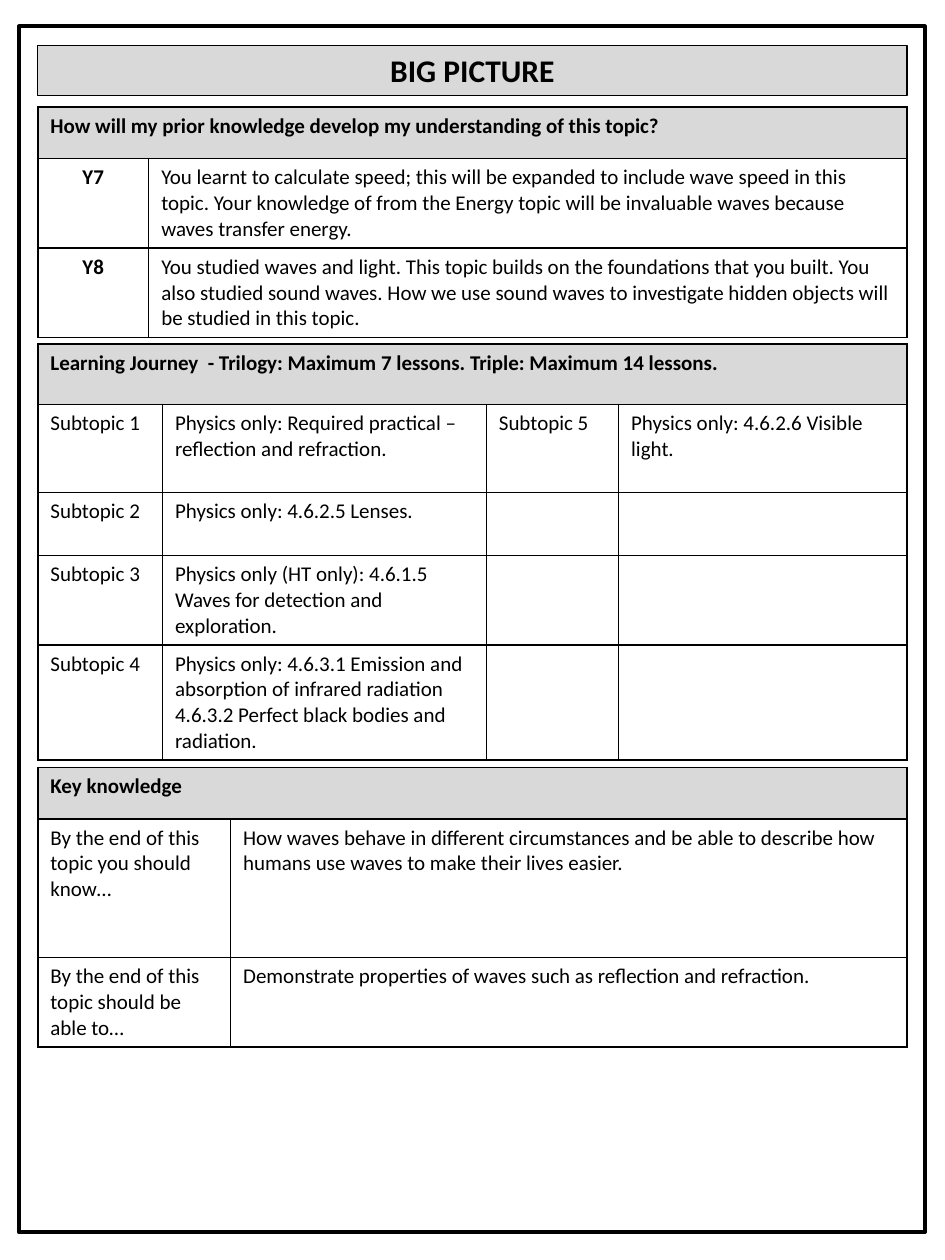
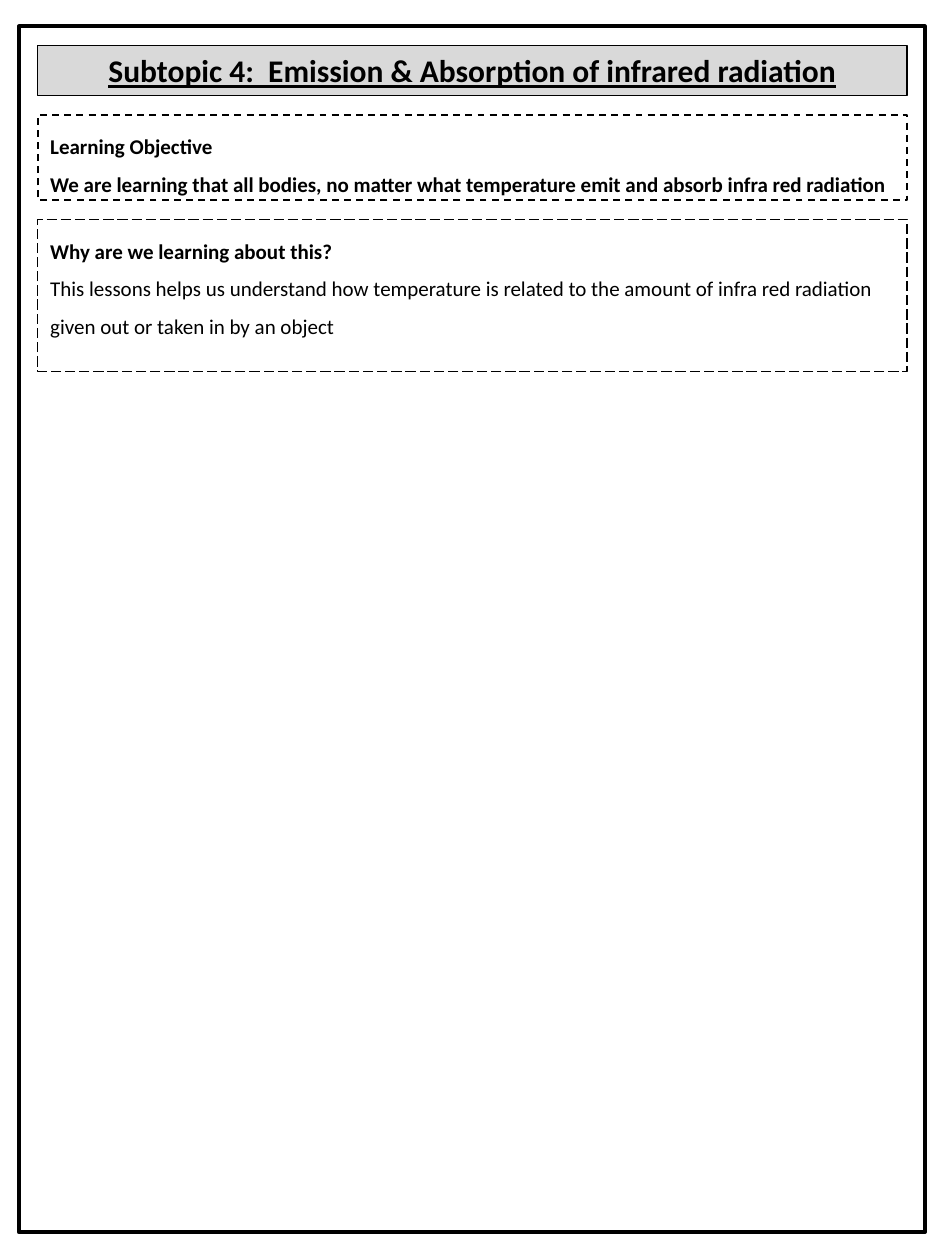
import pptx
import pptx.dml.color
import pptx.enum.dml
import pptx.enum.shapes
import pptx.enum.text
import pptx.oxml.ns
import pptx.util
from lxml import etree

Inches = pptx.util.Inches
Pt = pptx.util.Pt
RGBColor = pptx.dml.color.RGBColor
Align = pptx.enum.text.PP_ALIGN
Dash = pptx.enum.dml.MSO_LINE

BLACK = RGBColor(0x00, 0x00, 0x00)
GREY = RGBColor(0xD9, 0xD9, 0xD9)
WHITE = RGBColor(0xFF, 0xFF, 0xFF)
FONT = "Calibri"
LEFT, WIDTH = 0.3, 6.9


class Sheet:
    """Holds the deck, its style and the current slide."""

    def __init__(self):
        self.deck = pptx.Presentation()
        self.deck.slide_width = Inches(7.5)
        self.deck.slide_height = Inches(10)

    def page(self, title, under=None):
        """Start a slide with its frame and title band."""
        self.slide = self.deck.slides.add_slide(self.deck.slide_layouts[6])
        self.box(0.15, 0.21, 7.19, 9.57, 2.25)
        band = self.box(LEFT, 0.36, WIDTH, 0.4, 0.75, fill=GREY)
        self.text(band.text_frame, [(title, True)], 18, Align.CENTER, under=under)

    def box(self, left, top, width, height, line, fill=None, dash=None):
        shape = self.slide.shapes.add_shape(
            pptx.enum.shapes.MSO_SHAPE.RECTANGLE,
            Inches(left), Inches(top), Inches(width), Inches(height))
        shape.shadow.inherit = False
        self.fill(shape, fill)
        shape.line.color.rgb = BLACK
        shape.line.width = Pt(line)
        if dash:
            shape.line.dash_style = dash
        shape.text_frame.vertical_anchor = pptx.enum.text.MSO_ANCHOR.TOP
        return shape

    def fill(self, item, color):
        if color is None:
            item.fill.background()
        else:
            item.fill.solid()
            item.fill.fore_color.rgb = color

    def text(self, frame, lines, size=12, align=Align.LEFT, space=None, under=None):
        """Write one paragraph for each (words, bold) pair."""
        frame.word_wrap = True
        for i, (words, bold) in enumerate(lines):
            para = frame.add_paragraph() if i else frame.paragraphs[0]
            para.alignment = align
            if space:
                para.line_spacing = space
            run = para.add_run()
            run.text = words
            font = run.font
            font.name, font.size, font.bold = FONT, Pt(size), bold
            font.underline = under
            font.color.rgb = BLACK

    def note(self, top, height, line, dash, lines):
        """Draw a dashed box of widely spaced text."""
        shape = self.box(LEFT, top, WIDTH, height, line, dash=dash)
        self.text(shape.text_frame, lines, space=1.5)

    def edge(self, cell):
        """Give a cell thin black borders, placed ahead of its fill."""
        props = cell._tc.get_or_add_tcPr()
        qn = pptx.oxml.ns.qn
        for i, side in enumerate(("lnL", "lnR", "lnT", "lnB")):
            line = etree.Element(qn("a:" + side), w=str(Pt(1)))
            solid = etree.SubElement(line, qn("a:solidFill"))
            etree.SubElement(solid, qn("a:srgbClr"), val=str(BLACK))
            props.insert(i, line)

    def grid(self, top, cols, highs, head, rows, fill=None, label=False):
        """Add a table with a merged header; label marks a bold first column."""
        table = self.slide.shapes.add_table(
            len(highs), len(cols), Inches(LEFT), Inches(top),
            Inches(WIDTH), Inches(sum(highs))).table
        table.first_row = table.horz_banding = False
        for col, width in zip(table.columns, cols):
            col.width = Inches(width)
        for row, high in zip(table.rows, highs):
            row.height = Inches(high)
        for cell in table.iter_cells():
            self.fill(cell, fill)
            self.edge(cell)
        # Header
        first = table.cell(0, 0)
        first.merge(table.cell(0, len(cols) - 1))
        self.fill(first, GREY)
        self.text(first.text_frame, [(head, True)])
        # Body
        for r, row in enumerate(rows, 1):
            for c, words in enumerate(row):
                if words:
                    mark = label and c == 0
                    self.text(table.cell(r, c).text_frame,
                              [(part, mark) for part in words.split("\n")],
                              align=Align.CENTER if mark else Align.LEFT)


def main():
    sheet = Sheet()

    # Big picture
    sheet.page("BIG PICTURE")
    sheet.grid(
        2.73, [0.99, 2.57, 1.05, 2.29], [0.48, 0.7, 0.5, 0.7, 0.9],
        "Learning Journey  - Trilogy: Maximum 7 lessons. Triple: Maximum 14 lessons.",
        [("Subtopic 1", "Physics only: Required practical – reflection and refraction.",
          "Subtopic 5", "Physics only: 4.6.2.6 Visible light."),
         ("Subtopic 2", "Physics only: 4.6.2.5 Lenses."),
         ("Subtopic 3", "Physics only (HT only): 4.6.1.5 Waves for detection and "
          "exploration."),
         ("Subtopic 4", "Physics only: 4.6.3.1 Emission and absorption of infrared "
          "radiation\n4.6.3.2 Perfect black bodies and radiation.")])
    sheet.grid(
        0.85, [0.88, 6.02], [0.41, 0.7, 0.7],
        "How will my prior knowledge develop my understanding of this topic?",
        [("Y7", "You learnt to calculate speed; this will be expanded to include wave "
          "speed in this topic. Your knowledge of from the Energy topic will be "
          "invaluable waves because waves transfer energy."),
         ("Y8", "You studied waves and light. This topic builds on the foundations that "
          "you built. You also studied sound waves. How we use sound waves to "
          "investigate hidden objects will be studied in this topic.")],
        fill=WHITE, label=True)
    sheet.grid(
        6.09, [1.53, 5.37], [0.41, 1.1, 0.7], "Key knowledge",
        [("By the end of this topic you should know…",
          "How waves behave in different circumstances and be able to describe how "
          "humans use waves to make their lives easier."),
         ("By the end of this topic should be able to…",
          "Demonstrate properties of waves such as reflection and refraction.")])

    # Subtopic 4
    sheet.page("Subtopic 4:  Emission & Absorption of infrared radiation", under=True)
    sheet.note(0.91, 0.68, 1, Dash.DASH, [
        ("Learning Objective", True),
        ("We are learning that all bodies, no matter what temperature emit and absorb "
         "infra red radiation", True)])
    sheet.note(1.74, 1.21, 0.75, Dash.LONG_DASH, [
        ("Why are we learning about this?", True),
        ("This lessons helps us understand how temperature is related to the amount of "
         "infra red radiation given out or taken in by an object", False)])

    sheet.deck.save("out.pptx")


if __name__ == "__main__":
    main()
